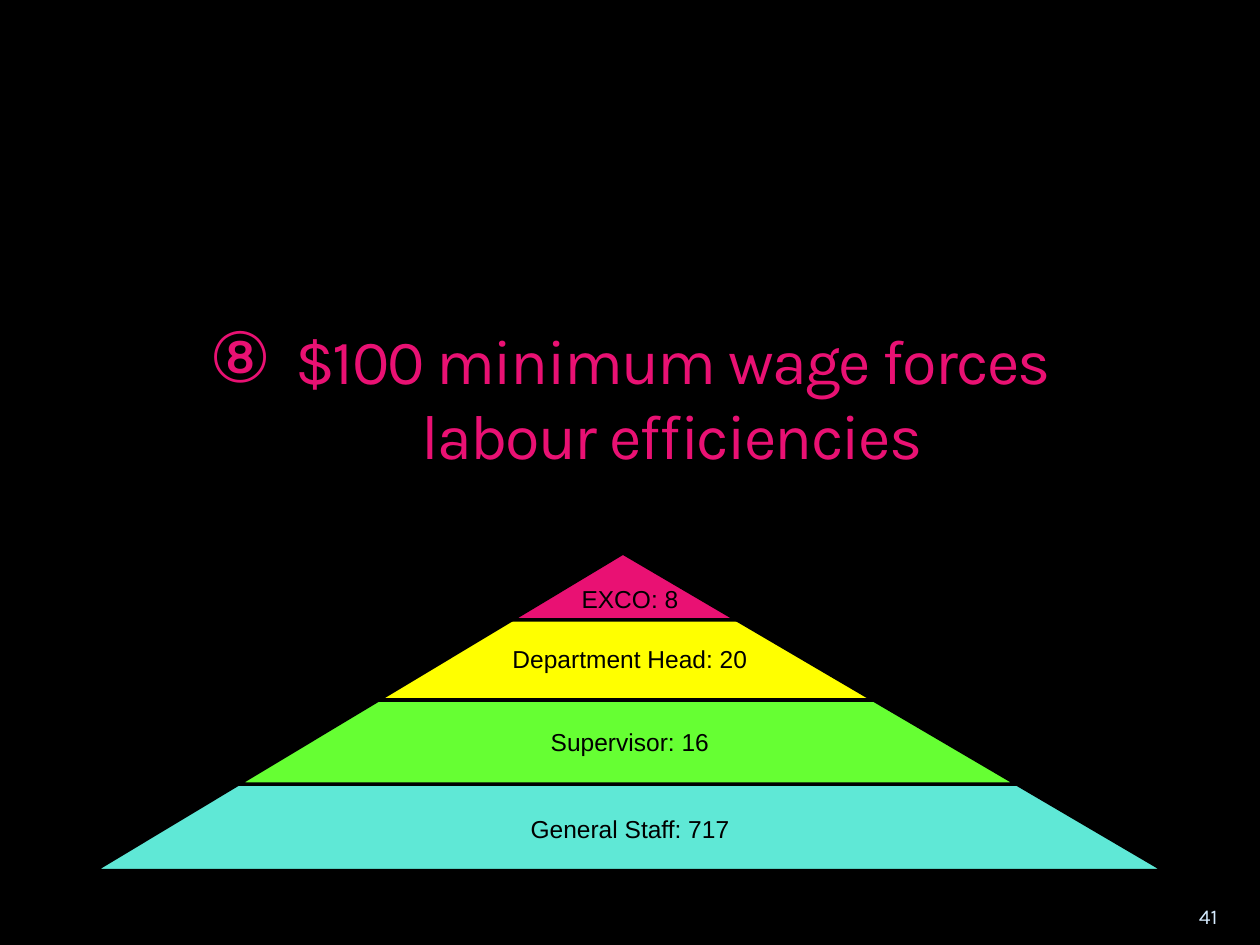
from lxml import etree
from pptx import Presentation
from pptx.dml.color import RGBColor
from pptx.enum.shapes import MSO_SHAPE
from pptx.enum.text import MSO_ANCHOR, MSO_AUTO_SIZE, PP_ALIGN
from pptx.oxml.ns import qn
from pptx.util import Pt

TRIANGLE = MSO_SHAPE.ISOSCELES_TRIANGLE
TOP, BOTTOM = MSO_ANCHOR.TOP, MSO_ANCHOR.BOTTOM
LEFT, CENTER = PP_ALIGN.LEFT, PP_ALIGN.CENTER
NO_FIT, GROW = MSO_AUTO_SIZE.NONE, MSO_AUTO_SIZE.SHAPE_TO_FIT_TEXT

BLACK, PINK, PALE = "000000", "E91173", "D6ECFF"
APEX_X, APEX_Y = 356, 316
APEX_RATIO, SLOPE = 0.494, 3.37
LABEL_CENTER, LABEL_HEIGHT = 360, 24.5
TIERS = [
    ("General Staff: 717", "5FE8D6", 181.5, 461.5, 129),
    ("Supervisor: 16", "66FF33", 132, 412, 105),
    ("Department Head: 20", "FFFF00", 84, 364.5, 149),
    ("EXCO: 8", PINK, 38.2, 330, 70.5),
]


def rgb(value):
    return RGBColor.from_string(value)


class Deck:
    def __init__(self, prs):
        self.slide = prs.slides.add_slide(prs.slide_layouts[5])
        fill = self.slide.background.fill
        fill.solid()
        fill.fore_color.rgb = rgb(BLACK)

    def format(self, p, font, size, color, align):
        p.alignment = align
        for r in p.runs:
            r.font.name = font
            r.font.size = Pt(size)
            r.font.color.rgb = rgb(color)

    def title(self, text, bullet, x, y, w, h):
        sp = self.slide.shapes.title
        sp.left, sp.top, sp.width, sp.height = Pt(x), Pt(y), Pt(w), Pt(h)
        tf = sp.text_frame
        tf.text = text
        tf.word_wrap = True
        tf.auto_size = NO_FIT
        tf.vertical_anchor = TOP
        p = tf.paragraphs[0]
        pPr = p._p.get_or_add_pPr()
        pPr.set("marL", str(Pt(49)))
        pPr.set("indent", str(Pt(-49)))
        bu_color = etree.SubElement(pPr, qn("a:buClr"))
        etree.SubElement(bu_color, qn("a:srgbClr"), val=PINK)
        etree.SubElement(pPr, qn("a:buSzPct"), val="110000")
        etree.SubElement(pPr, qn("a:buFont"), typeface="Karla")
        etree.SubElement(pPr, qn("a:buChar"), char=bullet)
        self.format(p, "Karla", 36, PINK, CENTER)
        p.runs[0].font._element.set("spc", "-100")

    def text(self, text, x, y, w, h, font, size, color,
             align=LEFT, anchor=TOP, wrap=True, fit=NO_FIT):
        sp = self.slide.shapes.add_textbox(Pt(x), Pt(y), Pt(w), Pt(h))
        tf = sp.text_frame
        tf.text = text
        tf.word_wrap = wrap
        tf.auto_size = fit
        tf.vertical_anchor = anchor
        self.format(tf.paragraphs[0], font, size, color, align)

    def triangle(self, height, color):
        w = height * SLOPE
        sp = self.slide.shapes.add_shape(
            TRIANGLE, Pt(APEX_X - APEX_RATIO * w), Pt(APEX_Y), Pt(w), Pt(height))
        sp.adjustments[0] = APEX_RATIO
        sp.shadow.inherit = False
        sp.fill.solid()
        sp.fill.fore_color.rgb = rgb(color)
        sp.line.color.rgb = rgb(BLACK)
        sp.line.width = Pt(2)

    def label(self, text, y, w):
        self.text(text, LABEL_CENTER - w / 2, y, w, LABEL_HEIGHT,
                  "Arial", 14, BLACK, CENTER, wrap=False, fit=GROW)


def main():
    prs = Presentation()
    prs.slide_width, prs.slide_height = Pt(720), Pt(540)
    deck = Deck(prs)
    deck.title("$100 minimum wage forces labour efficiencies", "⑧",
               83.5, 180, 552, 42)
    deck.text("41", 678, 505.5, 36, 29, "Karla", 12, PALE, anchor=BOTTOM)
    for name, color, height, label_y, label_w in TIERS:
        deck.triangle(height, color)
        deck.label(name, label_y, label_w)
    prs.save("out.pptx")


if __name__ == "__main__":
    main()
